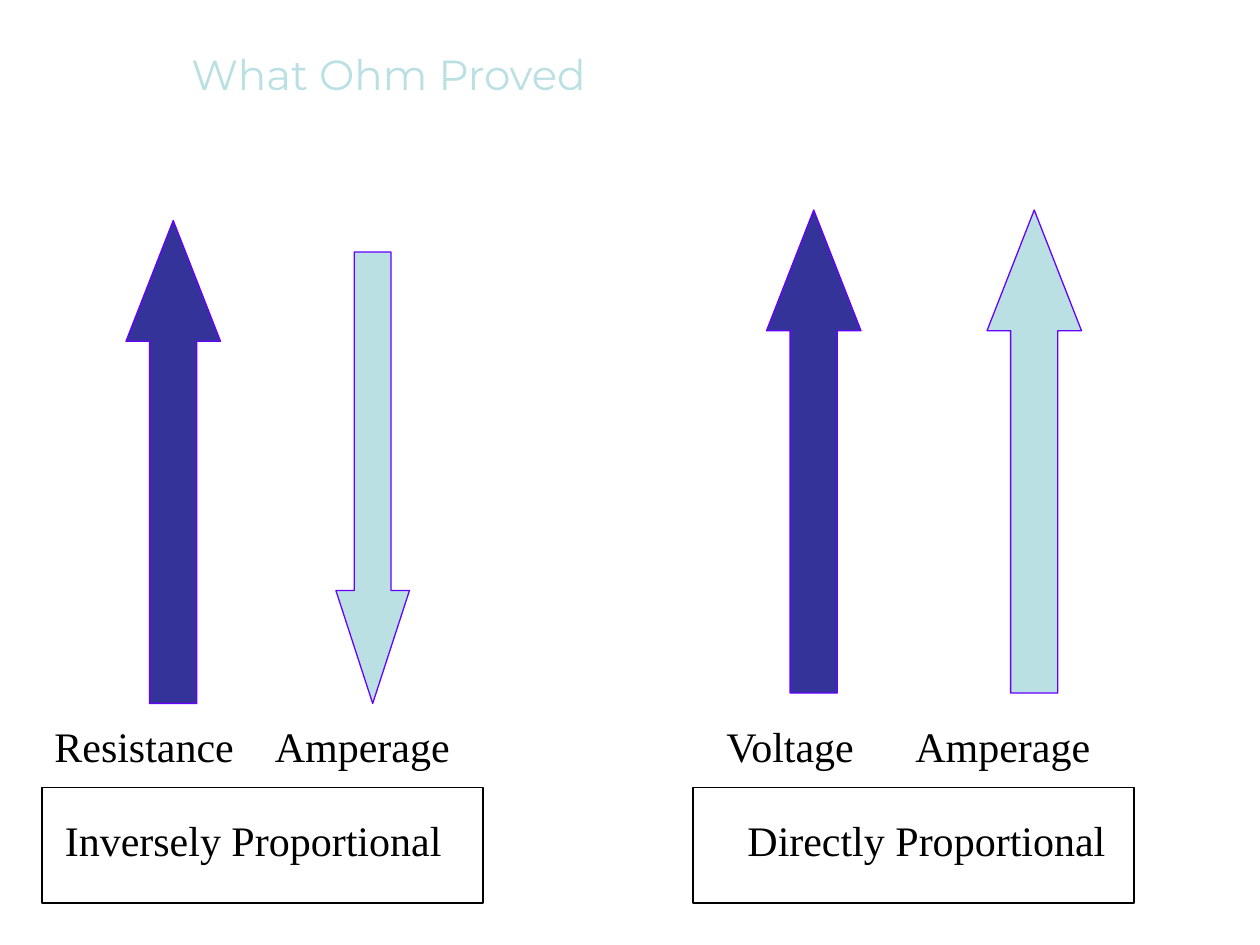
from lxml.etree import SubElement
from pptx import Presentation
from pptx.dml.color import RGBColor
from pptx.enum.shapes import MSO_SHAPE
from pptx.enum.text import MSO_AUTO_SIZE, PP_ALIGN
from pptx.oxml.ns import qn
from pptx.util import Inches, Pt

# Grid of 120 columns by 90 rows, twelve to the inch
COLS, ROWS, PER_INCH = 120, 90, 12
NAVY, PALE, VIOLET, BLACK = "333399", "BBE0E3", "6600FF", "000000"


def grid(*units):
    return [Inches(u / PER_INCH) for u in units]


def color(hex_value):
    return RGBColor.from_string(hex_value)


def add_outlined(s, kind, box, line, fill=None):
    sp = s.shapes.add_shape(kind, *grid(*box))
    sp.shadow.inherit = False
    if fill:
        sp.fill.solid()
        sp.fill.fore_color.rgb = color(fill)
    else:
        sp.fill.background()
    sp.line.color.rgb = color(line)
    sp.line.width = Pt(0.75)
    return sp


def add_arrow(s, kind, box, fill):
    sp = add_outlined(s, kind, box, VIOLET, fill)
    width, height = box[2:]
    # The head takes a quarter of the arrow's length
    sp.adjustments[1] = height / 4 / width


def add_text(s, text, box, font="Times New Roman", fill=BLACK):
    tf = s.shapes.add_textbox(*grid(*box)).text_frame
    tf.text = text
    tf.word_wrap = True
    p = tf.paragraphs[0]
    f = p.runs[0].font
    f.name, f.size, f.color.rgb = font, Pt(24), color(fill)
    return tf


def add_label(s, text, box):
    tf = add_text(s, text, box)
    tf.auto_size = MSO_AUTO_SIZE.SHAPE_TO_FIT_TEXT
    # Space before as half a line
    before = SubElement(tf.paragraphs[0]._p.get_or_add_pPr(), qn("a:spcBef"))
    SubElement(before, qn("a:spcPct")).set("val", "50000")


def main():
    prs = Presentation()
    prs.slide_width, prs.slide_height = grid(COLS, ROWS)
    s = prs.slides.add_slide(prs.slide_layouts[6])

    # Title
    tf = add_text(s, "What Ohm Proved", (5, 4, 64, 8), "Montserrat", PALE)
    tf.word_wrap = False
    tf.paragraphs[0].alignment = PP_ALIGN.CENTER

    # Arrows
    up, down = MSO_SHAPE.UP_ARROW, MSO_SHAPE.DOWN_ARROW
    for kind, box, fill in (
        (up, (12, 21, 9, 46), NAVY),
        (down, (32, 24, 7, 43), PALE),
        (up, (73, 20, 9, 46), NAVY),
        (up, (94, 20, 9, 46), PALE),
    ):
        add_arrow(s, kind, box, fill)

    # Quantity names under the arrows
    for text, left, width in (
        ("Resistance", 4, 20),
        ("Amperage", 25, 29),
        ("Voltage", 68, 18),
        ("Amperage", 86, 29),
    ):
        add_label(s, text, (left, 68, width, 6))

    # Framed conclusions
    for text, left, width, frame_left in (
        ("Inversely Proportional", 5, 43, 4),
        ("Directly Proportional", 70, 38, 66),
    ):
        add_label(s, text, (left, 77, width, 6))
        add_outlined(s, MSO_SHAPE.RECTANGLE, (frame_left, 75, 42, 11), BLACK)

    prs.save("out.pptx")


if __name__ == "__main__":
    main()
